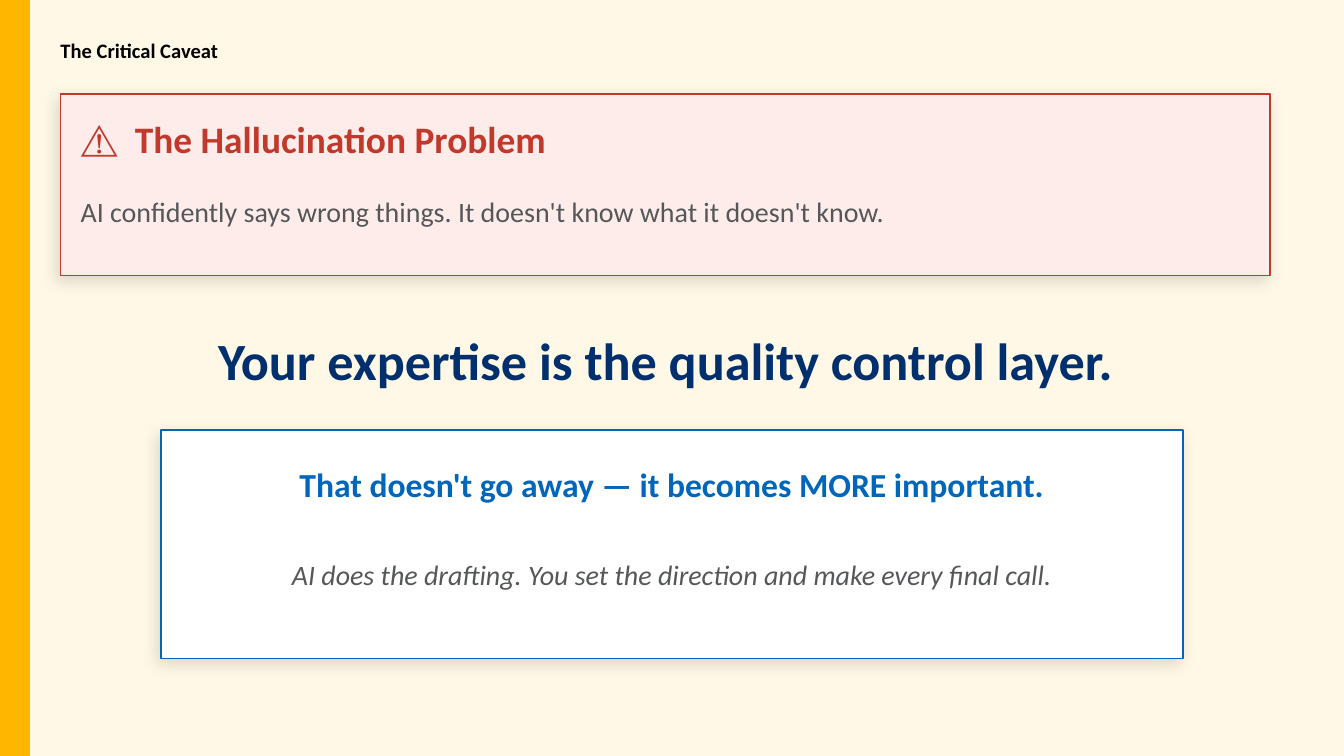
from pptx import Presentation
from pptx.dml.color import RGBColor
from pptx.enum import shapes, text
from pptx.oxml import parse_xml
from pptx.oxml.ns import nsdecls, qn
from pptx.util import Inches, Pt

HUES = {
    "cream": "FFF8E6", "gold": "FFB600", "black": "000000", "blush": "FDECEA",
    "red": "C0392B", "grey": "555759", "navy": "002F6D", "white": "FFFFFF",
    "blue": "0066BA",
}
LEFT, MID = text.PP_ALIGN.LEFT, text.PP_ALIGN.CENTER
WIDE = 10
TALL = WIDE * 9 / 16


def add_box(area, fill, edge, shade):
    box = slide.shapes.add_shape(shapes.MSO_SHAPE.RECTANGLE, *map(Inches, area))
    box.fill.solid()
    box.fill.fore_color.rgb = RGBColor.from_string(HUES[fill])
    box.line.color.rgb = RGBColor.from_string(HUES[edge])
    box.line.width = Pt(1)
    box.shadow.inherit = False
    if shade:
        box._element.spPr.find(qn("a:effectLst")).append(parse_xml(
            f'<a:outerShdw {nsdecls("a")} blurRad="{Pt(8)}" dist="{Pt(3)}" '
            f'dir="{135 * 60000}" algn="bl" rotWithShape="0">'
            f'<a:srgbClr val="{HUES["black"]}"><a:alpha val="12000"/></a:srgbClr>'
            '</a:outerShdw>'))


def add_text(area, words, size, hue, bold=False, slant=False, align=LEFT):
    frame = slide.shapes.add_textbox(*map(Inches, area)).text_frame
    frame.word_wrap = True
    frame.vertical_anchor = text.MSO_ANCHOR.MIDDLE
    frame.margin_left = frame.margin_right = 0
    frame.margin_top = frame.margin_bottom = 0
    line = frame.paragraphs[0]
    line.text = words
    line.alignment = align
    font = line.font
    font.name, font.size = "Calibri", Pt(size)
    font.bold, font.italic = bold, slant
    font.color.rgb = RGBColor.from_string(HUES[hue])


deck = Presentation()
deck.slide_width, deck.slide_height = Inches(WIDE), Inches(TALL)
slide = deck.slides.add_slide(deck.slide_layouts[6])
slide.background.fill.solid()
slide.background.fill.fore_color.rgb = RGBColor.from_string(HUES["cream"])

add_box((0, 0, 0.22, TALL), "gold", "gold", False)
add_text((0.45, 0.2, 9, 0.35), "The Critical Caveat", 11, "black", bold=True)

add_box((0.45, 0.7, 9, 1.35), "blush", "red", True)
add_text((0.6, 0.78, 8.7, 0.5), "⚠  The Hallucination Problem", 20, "red", bold=True)
add_text((0.6, 1.3, 8.7, 0.55),
         "AI confidently says wrong things. It doesn't know what it doesn't know.",
         15, "grey")

add_text((0.45, 2.35, 9, 0.65), "Your expertise is the quality control layer.",
         28, "navy", bold=True, align=MID)

add_box((1.2, 3.2, 7.6, 1.7), "white", "blue", True)
add_text((1.3, 3.35, 7.4, 0.5), "That doesn't go away — it becomes MORE important.",
         18, "blue", bold=True, align=MID)
add_text((1.3, 3.9, 7.4, 0.75),
         "AI does the drafting. You set the direction and make every final call.",
         15, "grey", slant=True, align=MID)

deck.save("out.pptx")
